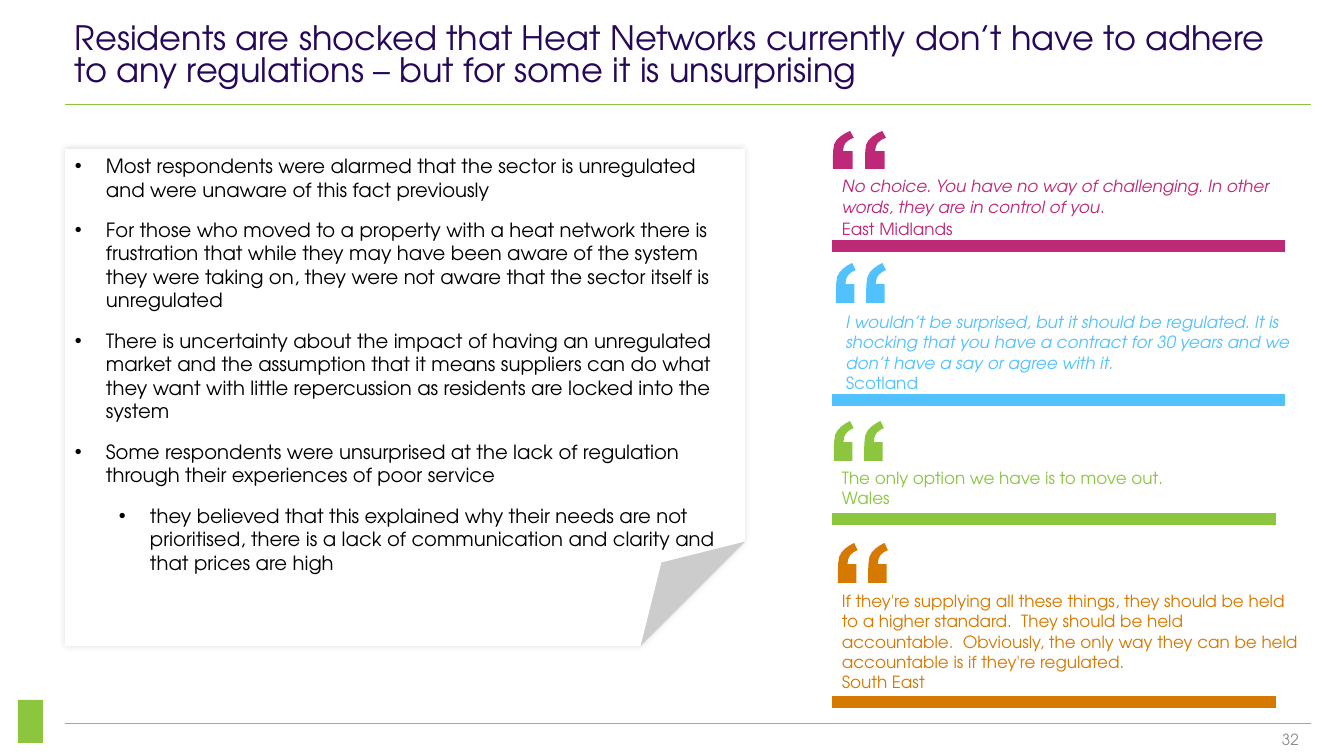
from lxml.etree import SubElement
from pptx import Presentation
from pptx.dml.color import RGBColor
from pptx.enum.shapes import MSO_CONNECTOR as Connector, MSO_SHAPE as Shape
from pptx.enum.text import MSO_ANCHOR as Anchor, PP_ALIGN as Align
from pptx.oxml.ns import qn
from pptx.util import Pt

EMU_PER_PX = 12192000 / 1344
FONT = "TeX Gyre Adventor"
COLOURS = {
    "white": "FFFFFF", "black": "000000", "navy": "260859", "grey": "8C8C8C",
    "pink": "BE2977", "blue": "52C2FF", "green": "8CC63F", "orange": "D67900",
}

TITLE = ("Residents are shocked that Heat Networks currently don’t have to adhere "
         "to any regulations – but for some it is unsurprising")

# (indent level, text)
FINDINGS = [
    (0, "Most respondents were alarmed that the sector is unregulated and were "
        "unaware of this fact previously"),
    (0, "For those who moved to a property with a heat network there is frustration "
        "that while they may have been aware of the system they were taking on, "
        "they were not aware that the sector itself is unregulated"),
    (0, "There is uncertainty about the impact of having an unregulated market and "
        "the assumption that it means suppliers can do what they want with little "
        "repercussion as residents are locked into the system"),
    (0, "Some respondents were unsurprised at the lack of regulation through their "
        "experiences of poor service"),
    (1, "they believed that this explained why their needs are not prioritised, "
        "there is a lack of communication and clarity and that prices are high"),
]
BULLET_HANG = 31
BULLET_INDENTS = [31, 75]

# colour, mark box, text box, bar end, line spacing,
# paragraphs of (text, italic) runs
QUOTES = [
    ("pink", (833, 131, 53, 38), (832, 169, 479, 74), (1285, 246), 1.07, [
        [("No choice. You have no way of challenging. In other words, they are in "
          "control of you", True), (".", False)],
        [("East Midlands", False)]]),
    ("blue", (836, 263, 50, 40), (836, 307, 475, 112), (1285, 400), 1.0, [
        [("I wouldn’t be surprised, but it should be regulated. It is shocking that "
          "you have a contract for 30 years and we don’t have a say or agree with "
          "it.", True)],
        [("Scotland", False)]]),
    ("green", (834, 421, 50, 40), (832, 463, 477, 50), (1276, 519), 1.0, [
        [("The only option we have is to move out.", False)],
        [("Wales", False)]]),
    ("orange", (838, 543, 50, 40), (832, 586, 477, 112), (1276, 702), 1.0, [
        [("If they're supplying all these things, they should be held to a higher "
          "standard.  They should be held accountable.  Obviously, the only way "
          "they can be held accountable is if they're regulated.", False)],
        [("South East", False)]]),
]
BAR_LEFT = 832

# One inverted comma on a 500 by 400 grid; the second stands MARK_STEP to the right
MARK_GRID = (500, 400)
MARK_STEP = 303
MARK_OUTLINE = [
    (185, 400), (0, 400), (0, 260), (3, 200), (12, 140), (35, 95), (70, 58),
    (115, 25), (162, 0), (197, 72), (155, 92), (120, 125), (103, 160), (95, 212),
    (185, 212),
]


def px(length):
    return round(length * EMU_PER_PX)


def colour(name):
    return RGBColor.from_string(COLOURS[name])


def paint(shape, name):
    shape.shadow.inherit = False
    shape.fill.solid()
    shape.fill.fore_color.rgb = colour(name)
    shape.line.fill.background()


def add_run(paragraph, text, size, name, italic=False):
    run = paragraph.add_run()
    run.text = text
    run.font.name = FONT
    run.font.size = Pt(size)
    run.font.italic = italic
    run.font.color.rgb = colour(name)


def add_text(slide, box, paragraphs, size, name, spacing=1.0,
             align=Align.LEFT, anchor=Anchor.TOP):
    frame = slide.shapes.add_textbox(*map(px, box)).text_frame
    frame.word_wrap = True
    frame.vertical_anchor = anchor
    for index, runs in enumerate(paragraphs):
        paragraph = frame.add_paragraph() if index else frame.paragraphs[0]
        paragraph.alignment = align
        paragraph.line_spacing = spacing
        for text, italic in runs:
            add_run(paragraph, text, size, name, italic)


def add_line(slide, start, end, name, width):
    line = slide.shapes.add_connector(Connector.STRAIGHT, *map(px, start + end))
    line.line.color.rgb = colour(name)
    line.line.width = Pt(width)
    SubElement(line._element.spPr, qn("a:effectLst"))


def add_quote_mark(slide, box, name):
    left, top, width, height = map(px, box)
    scale = (width / MARK_GRID[0], height / MARK_GRID[1])
    builder = None
    for shift in (0, MARK_STEP):
        points = [(x + shift, y) for x, y in MARK_OUTLINE]
        if builder is None:
            builder = slide.shapes.build_freeform(*points[0], scale=scale)
        else:
            builder.move_to(*points[0])
        builder.add_line_segments(points[1:], close=True)
    paint(builder.convert_to_shape(left, top), name)


def set_fold(shape, percent):
    """Set the size of the folded corner, which has no python-pptx adjustment."""
    guides = shape._element.spPr.find(qn("a:prstGeom")).get_or_add_avLst()
    SubElement(guides, qn("a:gd"), name="adj", fmla=f"val {percent * 1000}")


def add_glow(shape, blur, opacity):
    """Give the shape a soft black shadow on all sides."""
    effects = shape._element.spPr.find(qn("a:effectLst"))
    shadow = SubElement(effects, qn("a:outerShdw"), blurRad=str(Pt(blur)),
                        dist="0", dir="0", algn="ctr", rotWithShape="0")
    black = SubElement(shadow, qn("a:srgbClr"), val=COLOURS["black"])
    SubElement(black, qn("a:alpha"), val=str(opacity * 1000))


def add_bullet(paragraph, level):
    properties = paragraph._p.get_or_add_pPr()
    properties.set("marL", str(px(BULLET_INDENTS[level])))
    properties.set("indent", str(-px(BULLET_HANG)))
    SubElement(properties, qn("a:buFont"), typeface="Arial")
    SubElement(properties, qn("a:buChar"), char="•")
    paragraph.level = level


def add_findings_note(slide):
    note = slide.shapes.add_shape(Shape.FOLDED_CORNER, *map(px, (65, 149, 680, 497)))
    set_fold(note, 21)
    paint(note, "white")
    add_glow(note, blur=5, opacity=14)
    frame = note.text_frame
    frame.word_wrap = True
    frame.vertical_anchor = Anchor.TOP
    for index, (level, text) in enumerate(FINDINGS):
        paragraph = frame.add_paragraph() if index else frame.paragraphs[0]
        add_bullet(paragraph, level)
        paragraph.alignment = Align.LEFT
        paragraph.space_after = Pt(12)
        add_run(paragraph, text, 14, "black")


def main():
    presentation = Presentation()
    presentation.slide_width, presentation.slide_height = px(1344), px(756)
    slide = presentation.slides.add_slide(presentation.slide_layouts[6])

    for height in (104, 723):
        add_line(slide, (65, height), (1311, height), "green", 0.5)
    emblem = slide.shapes.add_shape(Shape.RECTANGLE, *map(px, (18, 700, 25, 43)))
    paint(emblem, "green")
    add_text(slide, (1201, 725, 108, 27), [[("32", False)]], 11, "grey",
             align=Align.RIGHT)
    add_text(slide, (65, 11, 1246, 83), [[(TITLE, False)]], 24, "navy",
             spacing=0.8, anchor=Anchor.BOTTOM)

    add_findings_note(slide)
    for name, mark_box, text_box, bar_end, spacing, paragraphs in QUOTES:
        add_quote_mark(slide, mark_box, name)
        add_text(slide, text_box, paragraphs, 12, name, spacing)
        add_line(slide, (BAR_LEFT, bar_end[1]), bar_end, name, 8)

    presentation.save("out.pptx")


if __name__ == "__main__":
    main()
